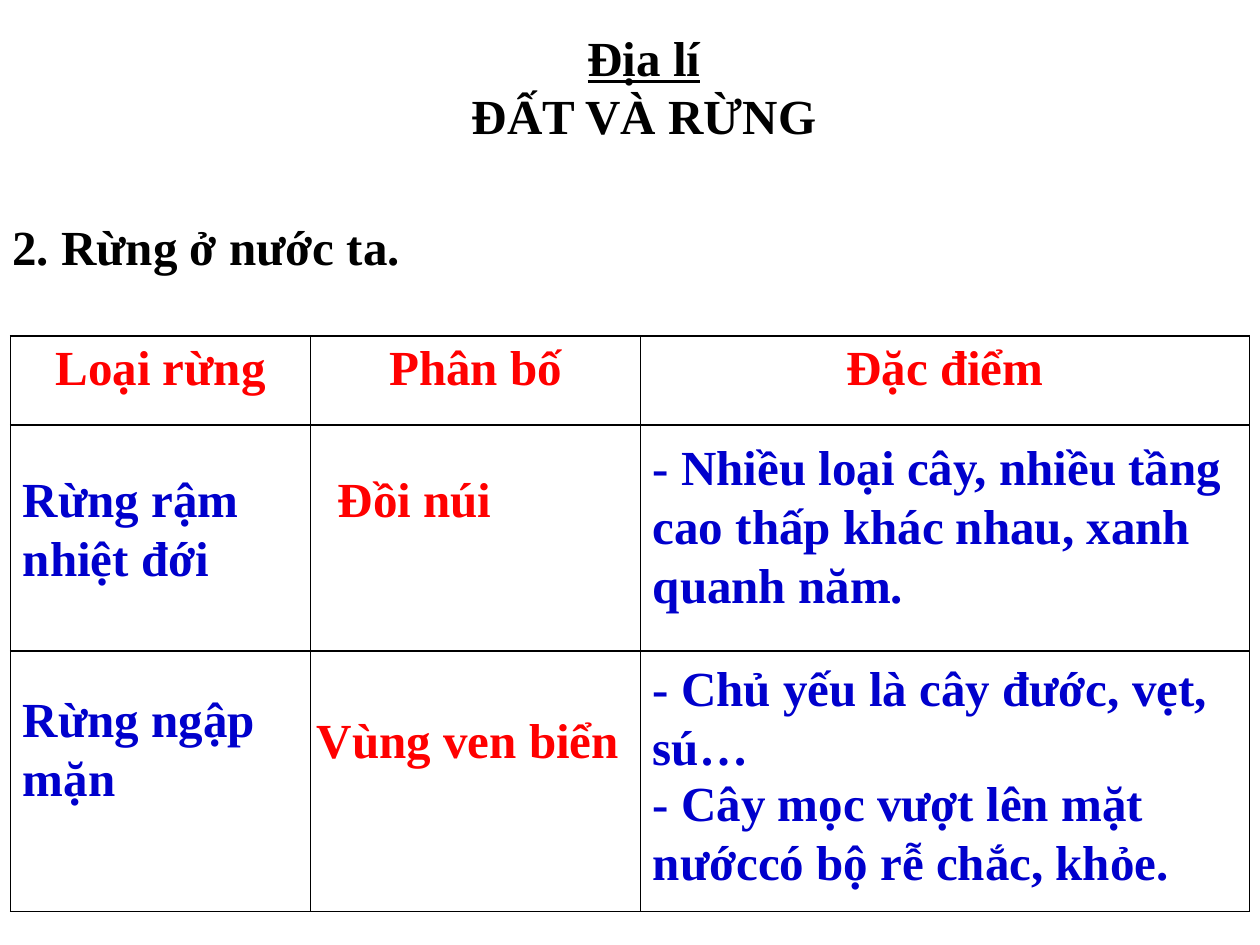
from lxml.etree import SubElement
from pptx import Presentation
from pptx.dml.color import RGBColor
from pptx.enum.text import MSO_AUTO_SIZE, PP_ALIGN
from pptx.oxml.ns import qn
from pptx.util import Pt

COLORS = {"black": "000000", "red": "FF0000", "blue": "0000CC"}
FONT, SIZE = "Times New Roman", 28

# Content
TITLE = [("Địa lí", True), ("ĐẤT VÀ RỪNG", False)]
HEADING = "2. Rừng ở nước ta."
HEADERS = ["Loại rừng", "Phân bố", "Đặc điểm"]
TABLE_LEFT, TABLE_TOP = 6, 192
COLS = [171.5, 188.5, 348]
ROWS = [51, 129, 149]
# Text, left, top, width, height, colour
ENTRIES = [
    ("Rừng rậm nhiệt đới", 6, 264, 168, 74, "blue"),
    ("Rừng ngập mặn", 6, 390, 168, 74, "blue"),
    ("Đồi núi", 186, 264, 138, 41, "red"),
    ("Vùng ven biển", 174, 402, 192, 41, "red"),
    ("- Nhiều loại cây, nhiều tầng cao thấp khác nhau, xanh quanh năm.",
     366, 246, 354, 108, "blue"),
    ("- Chủ yếu là cây đước, vẹt, sú…", 366, 372, 354, 74, "blue"),
    ("- Cây mọc vượt lên mặt nướccó bộ rễ chắc, khỏe.",
     366, 438, 354, 74, "blue"),
]


def write(p, text, color="black", align=PP_ALIGN.LEFT, underline=False):
    p.alignment = align
    r = p.add_run()
    r.text = text
    f = r.font
    f.name, f.size, f.bold, f.underline = FONT, Pt(SIZE), True, underline
    f.color.rgb = RGBColor.from_string(COLORS[color])


def text_box(s, left, top, width, height):
    tf = s.shapes.add_textbox(Pt(left), Pt(top), Pt(width), Pt(height)).text_frame
    tf.word_wrap = True
    tf.auto_size = MSO_AUTO_SIZE.SHAPE_TO_FIT_TEXT
    return tf


def style_cell(cell):
    # Borders go before the fill in the cell properties
    tcPr = cell._tc.get_or_add_tcPr()
    for side in ("a:lnL", "a:lnR", "a:lnT", "a:lnB"):
        ln = SubElement(tcPr, qn(side), w=str(Pt(1)))
        fill = SubElement(ln, qn("a:solidFill"))
        SubElement(fill, qn("a:srgbClr"), val=COLORS["black"])
    cell.fill.background()


prs = Presentation()
prs.slide_width, prs.slide_height = Pt(720), Pt(540)
s = prs.slides.add_slide(prs.slide_layouts[6])

# Section heading
write(text_box(s, 0, 120, 720, 41).paragraphs[0], HEADING)

# Table grid with header row
table = s.shapes.add_table(len(ROWS), len(COLS), Pt(TABLE_LEFT), Pt(TABLE_TOP),
                           Pt(sum(COLS)), Pt(sum(ROWS))).table
table.first_row = table.horz_banding = False
for col, width in zip(table.columns, COLS):
    col.width = Pt(width)
for row, height in zip(table.rows, ROWS):
    row.height = Pt(height)
for cell in table.iter_cells():
    style_cell(cell)
for i, text in enumerate(HEADERS):
    write(table.cell(0, i).text_frame.paragraphs[0], text, color="red",
          align=PP_ALIGN.CENTER)

# Entries laid over the table
for text, left, top, width, height, color in ENTRIES:
    write(text_box(s, left, top, width, height).paragraphs[0], text, color=color)

# Title
tf = text_box(s, 12, 12, 712, 75)
for i, (text, underline) in enumerate(TITLE):
    p = tf.add_paragraph() if i else tf.paragraphs[0]
    write(p, text, align=PP_ALIGN.CENTER, underline=underline)

prs.save("out.pptx")
